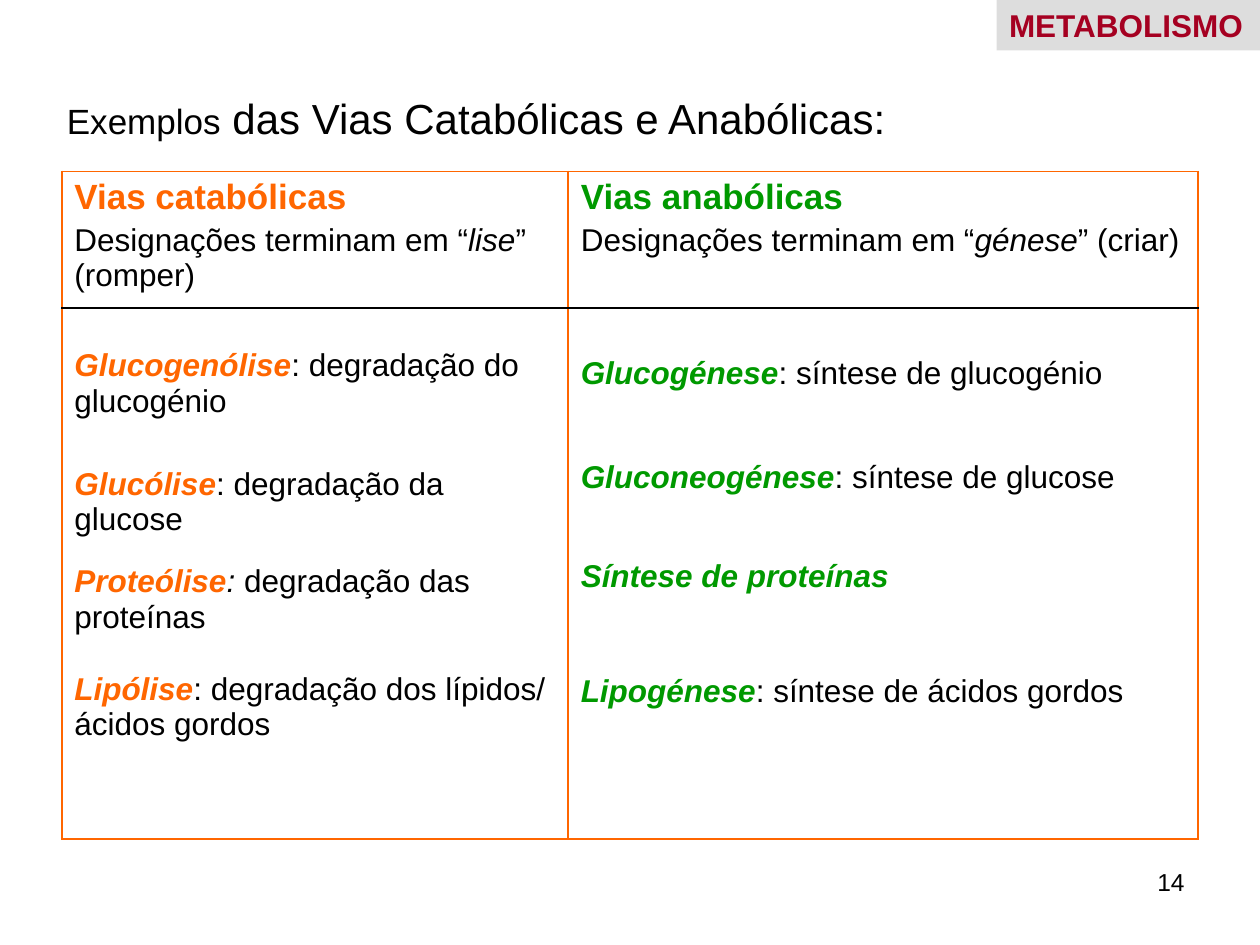
from pptx import Presentation
from pptx.dml.color import RGBColor as Rgb
from pptx.enum.shapes import MSO_SHAPE as Shape
from pptx.enum.text import MSO_ANCHOR as Anchor, MSO_AUTO_SIZE as Fit, PP_ALIGN as Align
from pptx.oxml.ns import qn
from pptx.util import Pt
from lxml.etree import Element, SubElement

INK = {"text": "000000", "cata": "FF6600", "ana": "009900",
       "tag": "A50021", "tagbg": "DDDDDD"}


class Deck:
    font = "Arial"

    def __init__(self, wide, high):
        self.prs = Presentation()
        self.prs.slide_width, self.prs.slide_height = Pt(wide), Pt(high)
        self.slide = self.prs.slides.add_slide(self.prs.slide_layouts[5])

    def run(self, par, text, size=18, ink="text", bold=False, ital=False):
        run = par.add_run()
        run.text = text
        font = run.font
        font.name, font.size, font.bold, font.italic = self.font, Pt(size), bold, ital
        font.color.rgb = Rgb.from_string(INK[ink])

    def fill(self, frame, pars):
        """Each paragraph is (space before, runs); a run is the arguments of run()."""
        for i, (gap, runs) in enumerate(pars):
            par = frame.add_paragraph() if i else frame.paragraphs[0]
            par.alignment = Align.LEFT
            par.space_before = Pt(gap)
            for args in runs:
                self.run(par, *args)

    def title(self, box, runs):
        head = self.slide.shapes.title
        head.left, head.top, head.width, head.height = map(Pt, box)
        frame = head.text_frame
        frame.word_wrap, frame.auto_size = False, Fit.NONE
        frame.vertical_anchor = Anchor.MIDDLE
        self.fill(frame, [(0, runs)])

    def tag(self, box, text):
        rect = self.slide.shapes.add_shape(Shape.RECTANGLE, *map(Pt, box))
        rect.shadow.inherit = False
        rect.fill.solid()
        rect.fill.fore_color.rgb = Rgb.from_string(INK["tagbg"])
        rect.line.fill.background()
        rect.text_frame.word_wrap = False
        self.fill(rect.text_frame, [(0, [(text, 18, "tag", True)])])

    def number(self, box, text):
        frame = self.slide.shapes.add_textbox(*map(Pt, box)).text_frame
        frame.word_wrap = True
        self.fill(frame, [(0, [(text, 14)])])
        frame.paragraphs[0].alignment = Align.RIGHT

    def edge(self, cell, inks):
        props = cell._tc.get_or_add_tcPr()
        for i, (side, ink) in enumerate(zip("LRTB", inks)):
            line = Element(qn(f"a:ln{side}"), w=str(Pt(1)))
            paint = SubElement(line, qn("a:solidFill"))
            SubElement(paint, qn("a:srgbClr"), val=INK[ink])
            props.insert(i, line)

    def table(self, left, top, cols, rows, cells):
        """Each cell is (top margin, paragraphs)."""
        grid = self.slide.shapes.add_table(
            len(rows), len(cols), Pt(left), Pt(top), Pt(sum(cols)), Pt(sum(rows))).table
        grid.first_row = grid.horz_banding = False
        for col, wide in zip(grid.columns, cols):
            col.width = Pt(wide)
        for r, high in enumerate(rows):
            grid.rows[r].height = Pt(high)
            for c, (pad, pars) in enumerate(cells[r]):
                cell = grid.cell(r, c)
                cell.margin_top = Pt(pad)
                cell.fill.background()
                self.fill(cell.text_frame, pars)
                rule = ("cata", "text") if r == 0 else ("text", "cata")
                self.edge(cell, ("cata", "cata", *rule))


def header(name, ink, stem, rest):
    return 3.6, [(0, [(name, 20, ink, True)]),
                 (3.6, [("Designações terminam em “",),
                        (stem, 18, "text", False, True), (rest,)])]


def terms(pad, ink, items):
    return pad, [(gap, [(term, 18, ink, True, True), *rest])
                 for gap, term, *rest in items]


deck = Deck(720, 540)

# Heading
deck.title((31, 49.5, 484.5, 36), [("Exemplos", 20), (" das Vias Catabólicas e Anabólicas:", 24)])

# Comparison of the two kinds of pathway
heads = [header("Vias catabólicas", "cata", "lise", "” (romper)"),
         header("Vias anabólicas", "ana", "génese", "” (criar)")]
lists = [
    terms(23, "cata", [
        (0, "Glucogenólise", (": degradação do glucogénio",)),
        (27.3, "Glucólise", (": degradação da glucose",)),
        (15.6, "Proteólise", (": ", 18, "text", False, True), ("degradação das proteínas",)),
        (21, "Lipólise", (": degradação dos lípidos/ ácidos gordos",))]),
    terms(27.3, "ana", [
        (0, "Glucogénese", (": síntese de glucogénio",)),
        (39.3, "Gluconeogénese", (": síntese de glucose",)),
        (36.5, "Síntese de proteínas"),
        (45.6, "Lipogénese", (": síntese de ácidos gordos",))])]
deck.table(35.3, 97.9, (289.4, 360), (78.1, 303.4), [heads, lists])

# Section tag and page number
deck.tag((569.5, 0, 150.5, 28.8), "METABOLISMO")
deck.number((516, 492, 168, 37.5), "14")

deck.prs.save("out.pptx")
